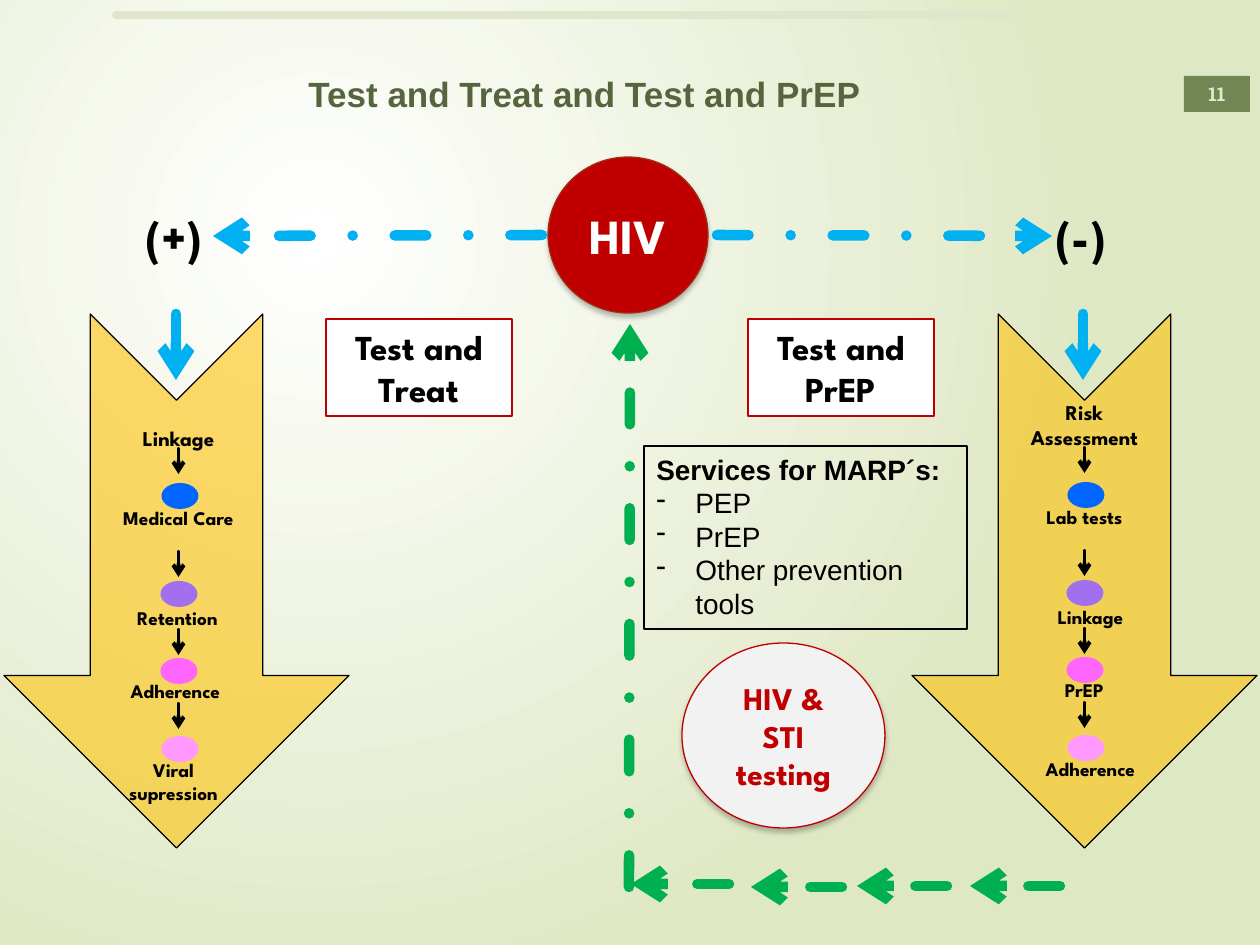
import lxml.etree
import pptx
import pptx.dml.color
import pptx.enum.dml
import pptx.enum.shapes
import pptx.enum.text
import pptx.oxml.ns
import pptx.util

SCALE = 914400 / 126
COLORS = {
    "white": "FFFFFF", "black": "000000", "sage": "DFE8C4", "rule": "E0E6CC",
    "badge": "728653", "number": "E3EACF", "title": "56653E", "gold": "FFC000",
    "red": "C00000", "rust": "9E2E0F", "pale": "F2F2F2", "sky": "00B0F0",
    "green": "00B050", "blue": "0066FF", "violet": "9966FF",
    "magenta": "FF66FF", "pink": "FF99FF",
}
SHAPE = pptx.enum.shapes.MSO_SHAPE
ALIGN = pptx.enum.text.PP_ALIGN
ANCHOR = pptx.enum.text.MSO_ANCHOR
qn = pptx.oxml.ns.qn


def px(*values):
    return [pptx.util.Emu(round(v * SCALE)) for v in values]


def rgb(name):
    return pptx.dml.color.RGBColor.from_string(COLORS[name])


def sub(parent, tag, **attrs):
    return lxml.etree.SubElement(parent, qn(tag), attrs)


def apply(obj, fmt):
    for key, value in fmt.items():
        setattr(obj, key, value)


def add_run(p, text, size, color="black", font="League Spartan", bold=True):
    r = p.add_run()
    r.text = text
    apply(r.font, {"name": font, "size": pptx.util.Pt(size), "bold": bold})
    r.font.color.rgb = rgb(color)


def write(sp, text, size, color="black", font="League Spartan",
          align=ALIGN.CENTER, anchor=ANCHOR.TOP):
    tf = sp.text_frame
    apply(tf, {"word_wrap": True, "vertical_anchor": anchor})
    p = tf.paragraphs[0]
    p.alignment = align
    add_run(p, text, size, color, font)
    return tf


def add_label(shapes, box, text, size, **fmt):
    return write(shapes.add_textbox(*px(*box)), text, size, **fmt)


def add_shape(shapes, kind, box, fill=None, line=None, alpha=None):
    sp = shapes.add_shape(kind, *px(*box))
    sp.shadow.inherit = False
    if fill:
        sp.fill.solid()
        sp.fill.fore_color.rgb = rgb(fill)
    else:
        sp.fill.background()
    if alpha:
        color = sp._element.spPr.find(qn("a:solidFill"))[0]
        sub(color, "a:alpha", val=str(alpha * 1000))
    if line:
        sp.line.color.rgb = rgb(line)
        sp.line.width = pptx.util.Pt(0.75)
    else:
        sp.line.fill.background()
    return sp


def add_line(shapes, start, end, color, width, dashed=False, arrow=True):
    c = shapes.add_connector(pptx.enum.shapes.MSO_CONNECTOR.STRAIGHT,
                             *px(*start, *end))
    c.line.color.rgb = rgb(color)
    c.line.width = pptx.util.Pt(width)
    if dashed:
        c.line.dash_style = pptx.enum.dml.MSO_LINE.DASH_DOT
    ln = c.line._get_or_add_ln()
    ln.set("cap", "rnd")
    sub(ln, "a:round")
    if arrow:
        sub(ln, "a:tailEnd", type="arrow")
    sub(c._element.spPr, "a:effectLst")


def add_background(s):
    s.background.fill.gradient()
    grad = next(s._element.iter(qn("a:gradFill")))
    for child in list(grad):
        grad.remove(child)
    stops = sub(grad, "a:gsLst")
    for pos, name in (("0", "white"), ("100000", "sage")):
        sub(sub(stops, "a:gs", pos=pos), "a:srgbClr", val=COLORS[name])
    circle = sub(grad, "a:path", path="circle")
    sub(circle, "a:fillToRect", l="50000", t="50000", r="100000", b="100000")


def add_header(s, x, y, w):
    add_line(s.shapes, (x + 116, y + 15), (x + 1008, y + 15), "rule", 4.25,
             arrow=False)
    badge = add_shape(s.shapes, SHAPE.RECTANGLE, (x + w - 76, y + 76, 66, 36),
                      "badge")
    write(badge, "11", 11, "number", "Roboto Slab", anchor=ANCHOR.MIDDLE)
    add_label(s.shapes, (x + 78, y + 66, 795, 55),
              "Test and Treat and Test and PrEP", 20, color="title",
              font="Arial", align=ALIGN.RIGHT)


def add_big_arrow(s, x, y, w, h):
    box = (x + (w - h) / 2, y + (h - w) / 2, h, w)
    sp = add_shape(s.shapes, SHAPE.NOTCHED_RIGHT_ARROW, box, "gold", "black", 57)
    sp.rotation = 90


def add_steps(s, x, y, w, labels):
    shapes = s.shapes.add_group_shape().shapes
    mid = x + w / 2
    dots = (("blue", 2, 90, None), ("violet", 1, 188, 90),
            ("magenta", 1, 265, None), ("pink", 2, 343, None))
    for color, dx, dy, alpha in dots:
        add_shape(shapes, SHAPE.OVAL, (mid - 19 + dx, y + dy, 37, 26), color,
                  alpha=alpha)
    for dy in (56, 159, 237, 311):
        add_line(shapes, (mid, y + dy), (mid, y + dy + 25), "black", 2.25)
    first, *rest = labels
    add_label(shapes, (x, y, w, 64), first[0], 12, anchor=ANCHOR.BOTTOM)
    for (text, dx), dy in zip(rest, (107, 207, 280, 359)):
        add_label(shapes, (x + dx, y + dy, w, 37), text, 11)


def add_result(s, x, y, sign):
    add_label(s.shapes, (x, y, 108, 72), sign, 28)
    add_line(s.shapes, (x + 56, y + 114), (x + 56, y + 180), "sky", 6, True)


def add_disc(s, box, text, size, fill, line, color):
    sp = add_shape(s.shapes, SHAPE.OVAL, box, fill, line)
    effects = sp._element.spPr.find(qn("a:effectLst"))
    shadow = sub(effects, "a:outerShdw", blurRad="38100", dist="25400",
                 dir="5400000", rotWithShape="0")
    sub(sub(shadow, "a:srgbClr", val=COLORS["black"]), "a:alpha", val="25000")
    write(sp, text, size, color, anchor=ANCHOR.MIDDLE)


def add_strategy(s, x, y, text):
    sp = add_shape(s.shapes, SHAPE.RECTANGLE, (x, y, 186, 97), "white", "red")
    write(sp, text, 20)


def add_services(s, x, y, w, h):
    sp = add_shape(s.shapes, SHAPE.RECTANGLE, (x, y, w, h), line="black")
    tf = write(sp, "Services for MARP´s:", 16, font="Arial", align=ALIGN.LEFT)
    indent = px(39)[0]
    for item in ("PEP", "PrEP", "Other prevention tools"):
        p = tf.add_paragraph()
        p.alignment = ALIGN.LEFT
        pPr = p._p.get_or_add_pPr()
        pPr.set("marL", str(indent))
        pPr.set("indent", str(-indent))
        sub(pPr, "a:buFontTx")
        sub(pPr, "a:buChar", char="-")
        add_run(p, item, 16, font="Arial", bold=False)


def add_return_loop(s, x, y, h):
    add_line(s.shapes, (x - 1, y + h), (x, y), "green", 6, True)
    for dx, dy, length in ((1, -3, 98), (121, 0, 91), (227, -1, 90), (340, -1, 90)):
        add_line(s.shapes, (x + dx + length, y + h + dy),
                 (x + dx, y + h + dy), "green", 6, True)


def main():
    prs = pptx.Presentation()
    prs.slide_width, prs.slide_height = px(1260, 945)
    s = prs.slides.add_slide(prs.slide_layouts[6])
    add_background(s)
    add_header(s, 0, 0, 1260)
    for x in (4, 912):
        add_big_arrow(s, x, 314, 345, 534)
    add_disc(s, (548, 157, 160, 156), "HIV", 28, "red", "rust", "white")
    add_result(s, 120, 200, "(+)")
    add_result(s, 1027, 200, "(-)")
    add_line(s.shapes, (542, 235), (213, 236), "sky", 6, True)
    add_line(s.shapes, (717, 235), (1052, 236), "sky", 6, True)
    add_steps(s, 104, 393, 149, (
        ("Linkage", 0), ("Medical Care", 0), ("Retention", -1),
        ("Adherence", -3), ("Viral supression", -5)))
    add_steps(s, 1010, 392, 149, (
        ("Risk Assessment", 0), ("Lab tests", 0), ("Linkage", 6),
        ("PrEP", 0), ("Adherence", 6)))
    add_return_loop(s, 630, 324, 563)
    add_disc(s, (682, 643, 203, 185), "HIV & STI testing", 18, "pale", "red", "red")
    add_strategy(s, 326, 319, "Test and Treat")
    add_strategy(s, 748, 319, "Test and PrEP")
    add_services(s, 644, 446, 323, 183)
    prs.save("out.pptx")


if __name__ == "__main__":
    main()
